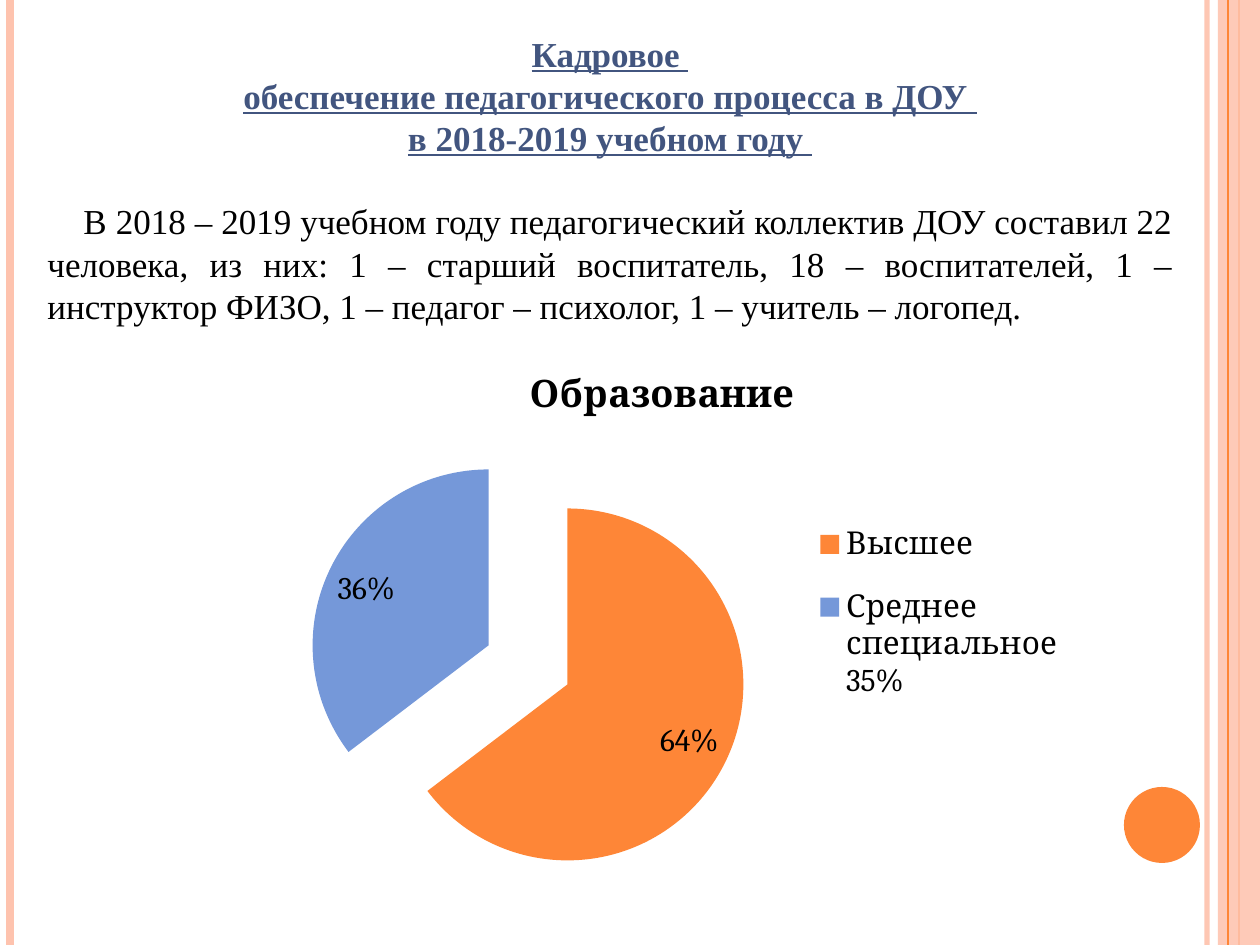
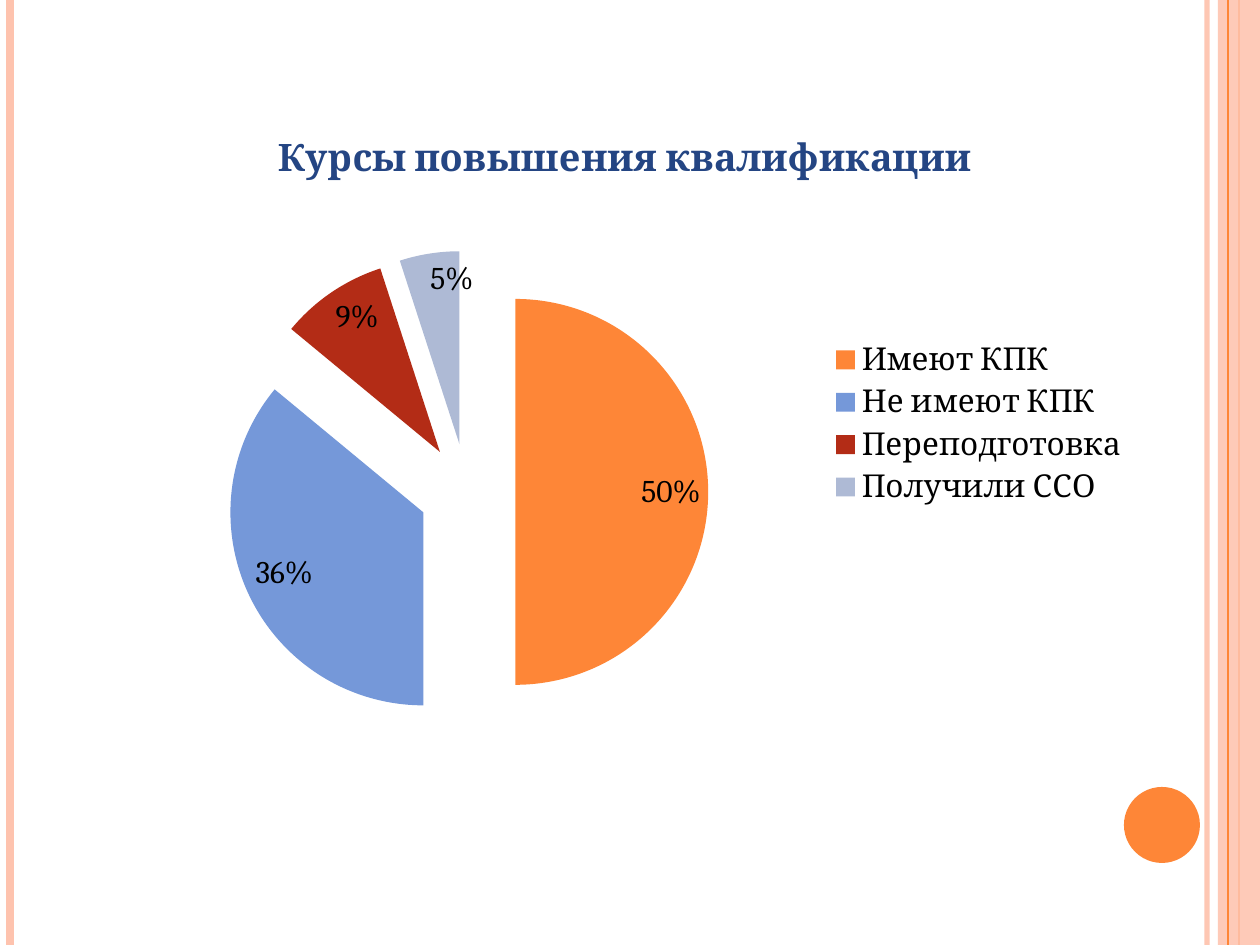
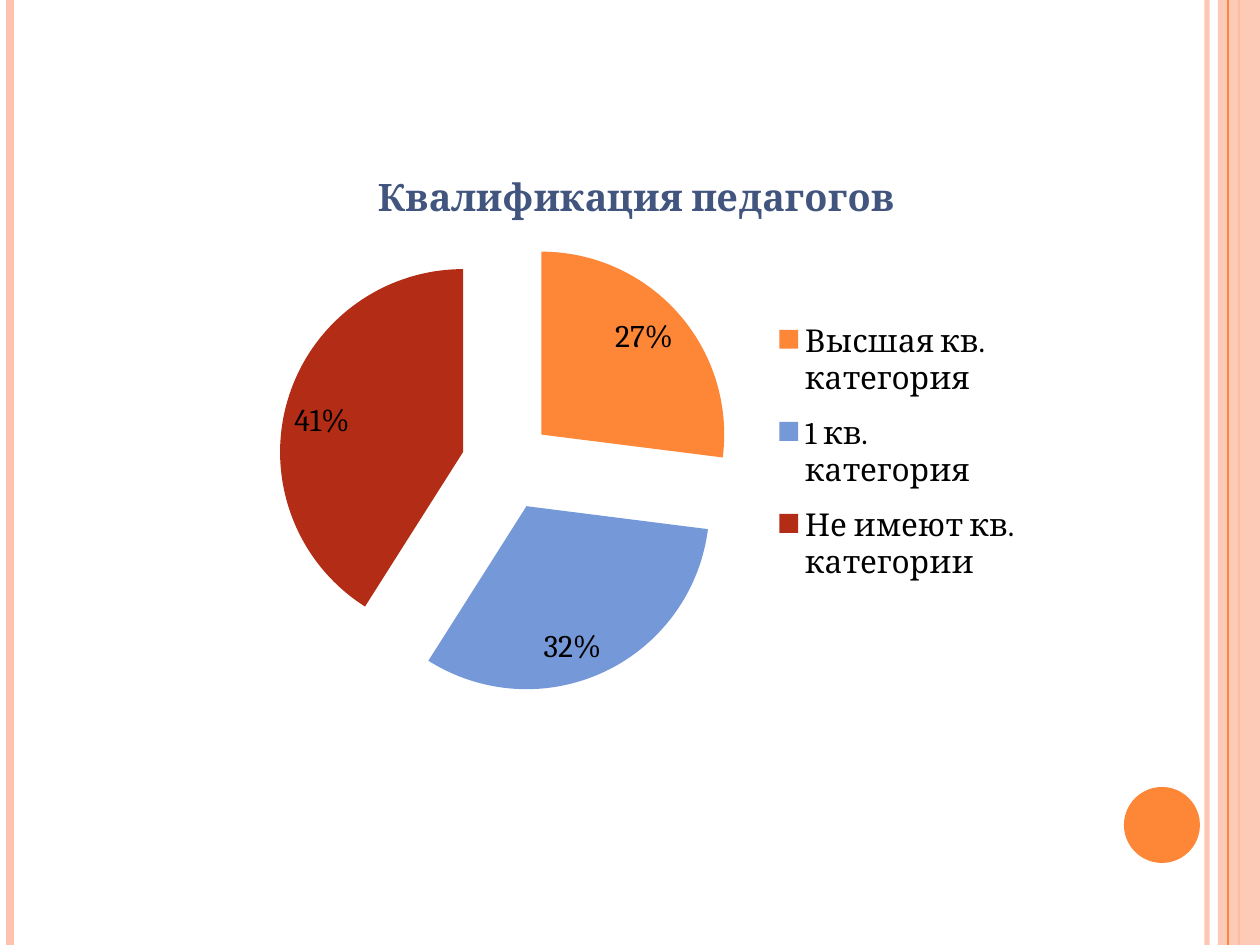
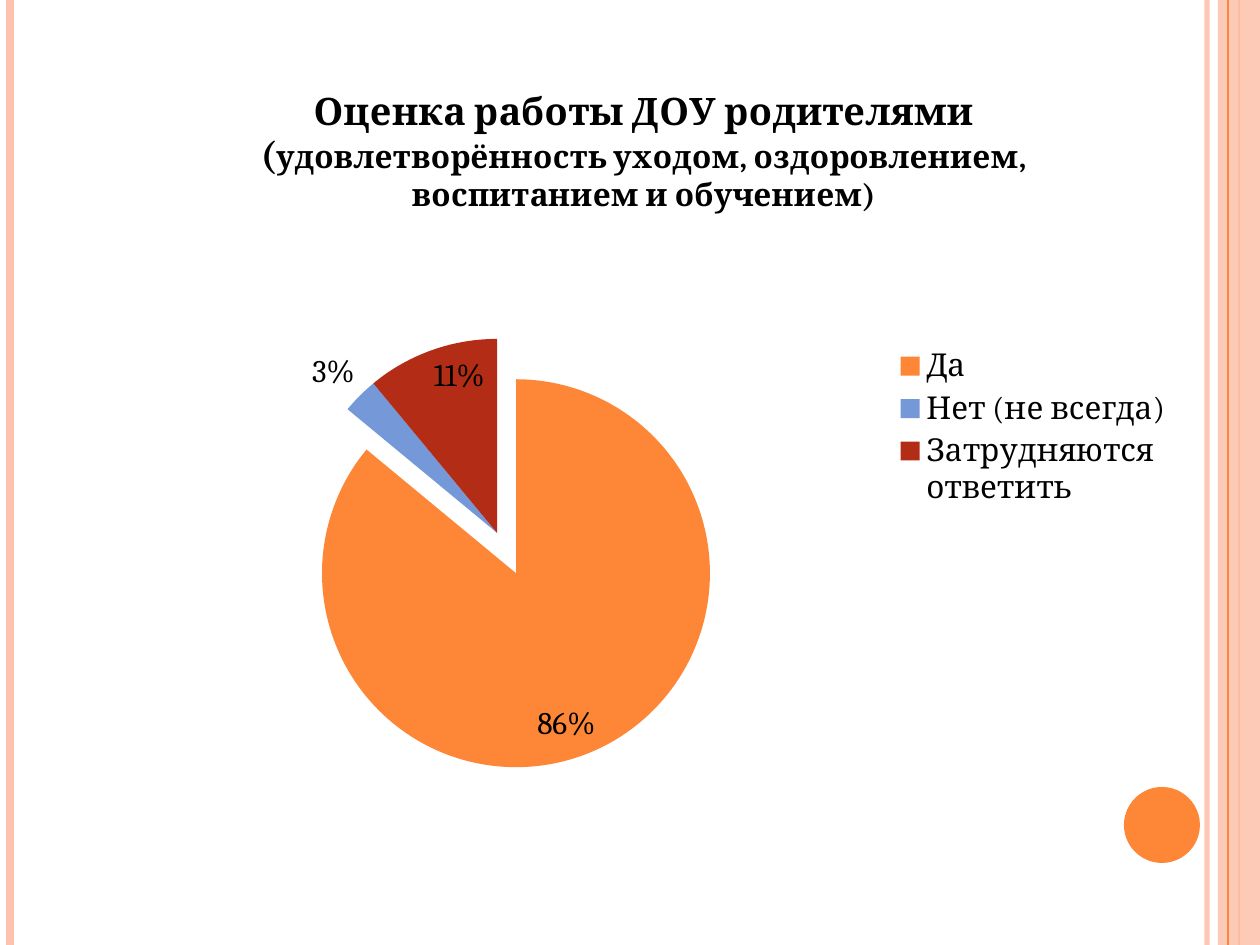
from lxml.etree import SubElement
from pptx import Presentation
from pptx.chart.data import CategoryChartData
from pptx.dml.color import RGBColor
from pptx.enum.chart import XL_CHART_TYPE as CT, XL_LABEL_POSITION as POS, XL_LEGEND_POSITION as LEG
from pptx.enum.shapes import MSO_CONNECTOR as CONN, MSO_SHAPE as SHAPE
from pptx.enum.text import MSO_ANCHOR as ANCHOR, MSO_AUTO_SIZE as AUTO, PP_ALIGN as ALIGN
from pptx.oxml.ns import qn
from pptx.util import Pt

COLORS = {
    "band": "FEC3AE", "orange": "FE8637", "blue": "7598D9", "red": "B32C16",
    "yellow": "F5CD2D", "lilac": "AEBAD5", "heading": "42557F", "navy": "244583",
    "black": "000000",
}
SLICES = ["orange", "blue", "red", "yellow", "lilac"]
WIDTH, HEIGHT = 1260, 945
SERIF, CHART_FONT = "Times New Roman", "Cambria"
BODY_SIZE, CHART_SIZE, CHART_TITLE_SIZE = 20, 18, 21.6


def px(n):
    """Turn pixels into EMU."""
    return int(n * 914400 / 126)


def rgb(name):
    """Return a named colour."""
    return RGBColor.from_string(COLORS[name])


def write(tf, lines, font=SERIF, size=BODY_SIZE, color="black", bold=False,
          underline=None, align=ALIGN.CENTER):
    """Write lines, each a string or a list of (text, size) runs."""
    for i, line in enumerate(lines):
        p = tf.add_paragraph() if i else tf.paragraphs[0]
        p.alignment = align
        for text, pt in [(line, size)] if isinstance(line, str) else line:
            r = p.add_run()
            r.text = text
            r.font.name, r.font.size = font, Pt(pt)
            r.font.bold, r.font.underline = bold, underline
            r.font.color.rgb = rgb(color)


def place(s, box):
    """Move a shape to a box given in pixels."""
    s.left, s.top, s.width, s.height = map(px, box)


def set_alpha(s, percent):
    """Make the colours of a shape partly transparent."""
    for clr in s.element.iter(qn("a:srgbClr")):
        SubElement(clr, qn("a:alpha")).set("val", str(percent * 1000))


def add_stripe(slide, x, color, weight):
    """Draw a vertical line over the full slide height."""
    line = slide.shapes.add_connector(CONN.STRAIGHT, px(x), 0, px(x), px(HEIGHT))
    line.line.color.rgb = rgb(color)
    line.line.width = Pt(weight)
    SubElement(line.element.spPr, qn("a:effectLst"))
    return line


def add_block(slide, kind, box, color):
    """Draw a plain filled shape."""
    s = slide.shapes.add_shape(kind, *map(px, box))
    s.shadow.inherit = False
    s.fill.solid()
    s.fill.fore_color.rgb = rgb(color)
    s.line.fill.background()
    return s


def decorate_master(prs, slide):
    """Draw the stripes and the disc, then move them to the slide master."""
    inner = add_stripe(slide, 1207, "band", 3)
    set_alpha(inner, 93)
    left = add_stripe(slide, 10, "band", 4.5)
    right = add_stripe(slide, 1239, "orange", 1.5)
    band = add_block(slide, SHAPE.RECTANGLE, (1218, 0, WIDTH - 1218, HEIGHT), "band")
    set_alpha(band, 87)
    edge = add_stripe(slide, 1228, "orange", 0.75)
    disc = add_block(slide, SHAPE.OVAL, (1124, 787, 76, 76), "orange")
    tree = prs.slide_master.element.cSld.spTree
    for i, s in enumerate([inner, left, right, band, edge, disc]):
        next(s.element.iter(qn("p:cNvPr"))).set("id", str(100 + i))
        tree.insert(2 + i, s.element)


def set_layout(parent, successor, frame, box, inner=False):
    """Fix a chart part at a slide box, as fractions of the chart frame."""
    for old in parent.findall(qn("c:layout")):
        parent.remove(old)
    layout = parent.makeelement(qn("c:layout"), {})
    parent.find(qn(successor)).addprevious(layout)
    manual = SubElement(layout, qn("c:manualLayout"))
    left, top, width, height = frame
    values = {"layoutTarget": "inner"} if inner else {}
    values |= {"xMode": "edge", "yMode": "edge",
               "x": (box[0] - left) / width, "y": (box[1] - top) / height}
    if len(box) == 4:
        values |= {"w": box[2] / width, "h": box[3] / height}
    for tag, value in values.items():
        text = value if isinstance(value, str) else f"{value:.4f}"
        SubElement(manual, qn(f"c:{tag}")).set("val", text)


def hide_entry(legend, index):
    """Leave one point out of the legend."""
    entry = legend.makeelement(qn("c:legendEntry"), {})
    SubElement(entry, qn("c:idx")).set("val", str(index))
    SubElement(entry, qn("c:delete")).set("val", "1")
    legend.find(qn("c:layout")).addprevious(entry)


def format_label(label, position):
    """Set the font and place of data labels."""
    label.font.size, label.font.name = Pt(CHART_SIZE), CHART_FONT
    label.font.color.rgb = rgb("black")
    label.position = position


def add_pie(slide, frame, title, data, title_at, center, radius, legend_box,
            name=None, title_color="black", explode=None, outside=(), custom=None):
    """Add a pie with exploded slices, value labels and a legend."""
    chart_data = CategoryChartData(number_format="0%")
    chart_data.categories = [label for label, _ in data]
    chart_data.add_series(name or title[0], [value for _, value in data])
    chart = slide.shapes.add_chart(CT.PIE, *map(px, frame), chart_data).chart
    chart.font.name, chart.font.size = CHART_FONT, Pt(CHART_SIZE)
    chart.font.color.rgb = rgb("black")

    chart.has_title = True
    write(chart.chart_title.text_frame, title, font=CHART_FONT,
          size=CHART_TITLE_SIZE, color=title_color, bold=True)
    chart.has_legend = True
    chart.legend.position = LEG.RIGHT
    chart.legend.include_in_layout = False

    plot = chart.plots[0]
    plot.vary_by_categories = True
    series = plot.series[0]
    labels = series.data_labels
    labels.show_value, labels.show_percentage = True, False
    labels.number_format, labels.number_format_is_linked = "0%", False
    format_label(labels, POS.INSIDE_END)

    points = series.points
    for i, color in enumerate(SLICES[:len(data)]):
        fill = points[i].format.fill
        fill.solid()
        fill.fore_color.rgb = rgb(color)
    for i, dpt in enumerate(chart.element.iter(qn("c:dPt"))):
        offset = 25 if explode is None else explode.get(i, 0)
        tag = dpt.makeelement(qn("c:explosion"), {"val": str(offset)})
        dpt.find(qn("c:spPr")).addprevious(tag)
    for i in outside:
        format_label(points[i].data_label, POS.OUTSIDE_END)
    for i, text in (custom or {}).items():
        label = points[i].data_label
        write(label.text_frame, [text], font=CHART_FONT, size=CHART_SIZE)
        label.position = POS.INSIDE_END

    root = chart.element.find(qn("c:chart"))
    legend = root.find(qn("c:legend"))
    pie_box = (center[0] - radius, center[1] - radius, 2 * radius, 2 * radius)
    set_layout(root.find(qn("c:title")), "c:overlay", frame, title_at)
    set_layout(legend, "c:overlay", frame, legend_box)
    set_layout(root.find(qn("c:plotArea")), "c:pieChart", frame, pie_box, inner=True)
    for i, (_, value) in enumerate(data):
        if value is None:
            hide_entry(legend, i)


def add_intro(slide, box):
    """Place the heading and the paragraph about the staff below it."""
    left, top, width, height = box
    title = slide.shapes.title
    place(title, (left, top, width, 127))
    body = slide.shapes.add_textbox(0, 0, 0, 0)
    place(body, (left, top + 168, width, height - 168))
    for s in (title, body):
        tf = s.text_frame
        tf.word_wrap, tf.auto_size = True, AUTO.NONE
        tf.vertical_anchor = ANCHOR.TOP
        tf.margin_top = tf.margin_bottom = 0
    write(title.text_frame,
          ["Кадровое ", "обеспечение педагогического процесса в ДОУ ",
           "в 2018-2019 учебном году "],
          color="heading", bold=True, underline=True)
    write(body.text_frame,
          ["В 2018 – 2019 учебном году педагогический коллектив ДОУ составил 22 человека, "
           "из них: 1 – старший воспитатель, 18 – воспитателей, 1 – инструктор ФИЗО, "
           "1 – педагог – психолог, 1 – учитель – логопед."],
          align=ALIGN.JUSTIFY)
    body.text_frame.paragraphs[0]._p.get_or_add_pPr().set("indent", str(px(36)))


def staff_slide(prs):
    """Build the slide on staff and education."""
    slide = prs.slides.add_slide(prs.slide_layouts[5])
    decorate_master(prs, slide)
    add_intro(slide, (35, 32, 1150, 297))
    add_pie(slide, (243, 344, 840, 559), ["Образование"],
            [("Высшее", 0.64), ("Среднее специальное 35%", 0.35), ("", None), ("", None)],
            title_at=(523, 362), center=(528, 665), radius=176,
            legend_box=(809, 500, 260, 225), custom={1: "36%"})


def chart_slide(prs, frame, title, data, **options):
    """Build a slide that holds one pie."""
    slide = prs.slides.add_slide(prs.slide_layouts[6])
    add_pie(slide, frame, title, data, **options)


def main():
    """Build and save the four slides."""
    prs = Presentation()
    prs.slide_width, prs.slide_height = px(WIDTH), px(HEIGHT)
    staff_slide(prs)
    chart_slide(prs, (84, 106, 1081, 645), ["Курсы повышения квалификации"],
                [("Имеют КПК", 0.5), ("Не имеют КПК", 0.36), ("Переподготовка", 0.09),
                 ("", None), ("Получили ССО", 0.05)],
                title_color="navy", title_at=(271, 126), center=(467, 492), radius=193,
                legend_box=(824, 336, 310, 175))
    chart_slide(prs, (243, 135, 794, 576), ["Квалификация педагогов"],
                [("Высшая кв. категория", 0.27), ("1 кв. категория", 0.32),
                 ("Не имеют кв. категории", 0.41)],
                title_color="heading", title_at=(371, 166), center=(507, 465), radius=183,
                legend_box=(772, 305, 250, 295))
    chart_slide(prs, (105, 65, 1081, 725),
                ["Оценка работы ДОУ родителями",
                 [("(", CHART_TITLE_SIZE),
                  ("удовлетворённость уходом, оздоровлением, воспитанием и обучением)",
                   CHART_SIZE)]],
                [("Да", 0.86), ("Нет (не всегда)", 0.03), ("Затрудняются ответить", 0.11)],
                name="Series 1", title_at=(257, 85), center=(497, 533), radius=194,
                legend_box=(888, 342, 290, 170), explode={0: 23}, outside=[1])
    prs.save("out.pptx")


if __name__ == "__main__":
    main()
